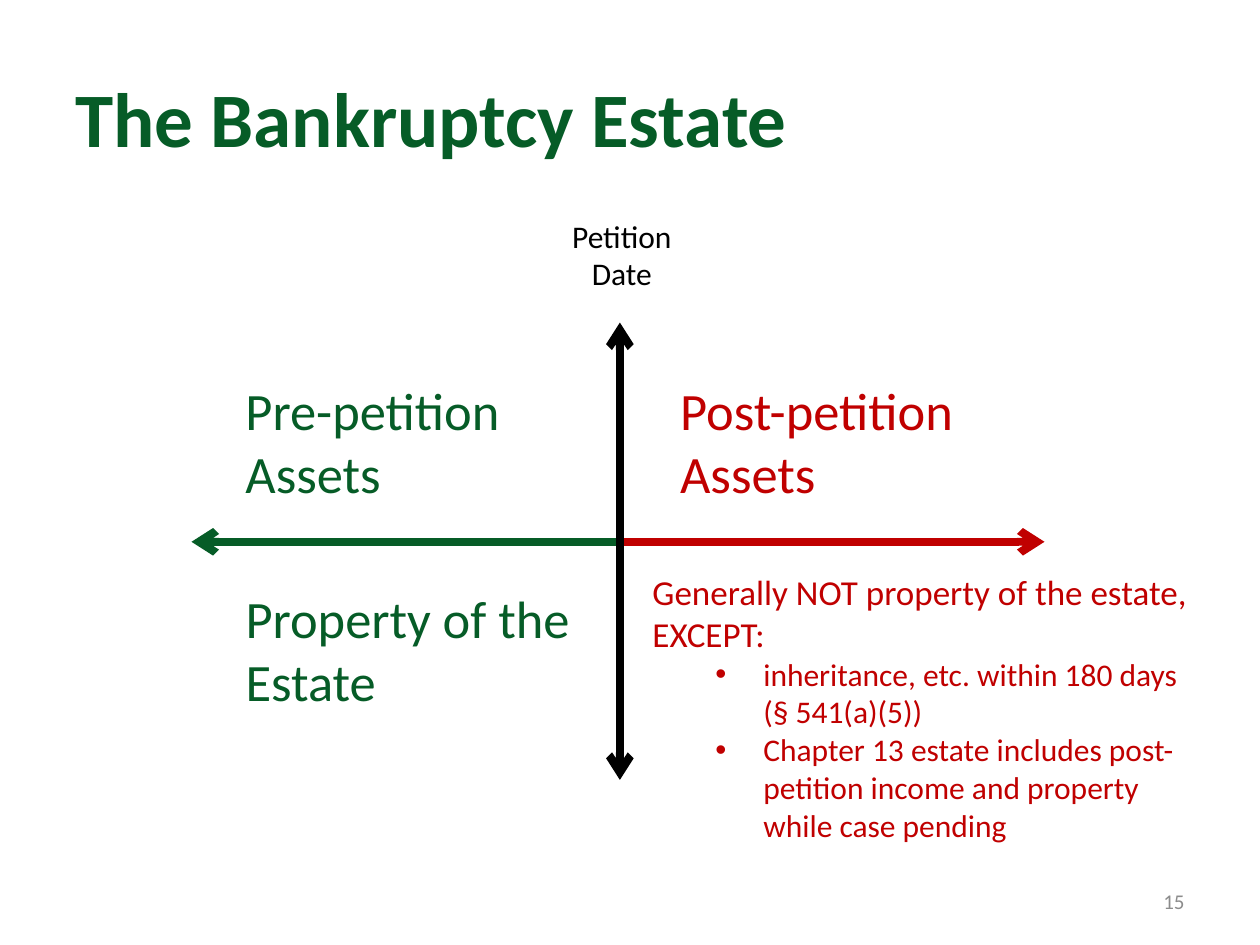
from dataclasses import dataclass

from lxml.etree import SubElement
from pptx import Presentation
from pptx.dml.color import RGBColor
from pptx.enum.shapes import MSO_CONNECTOR
from pptx.enum.text import MSO_ANCHOR, PP_ALIGN
from pptx.oxml.ns import qn
from pptx.util import Inches, Pt

GREEN = RGBColor(0x06, 0x5C, 0x27)
RED = RGBColor(0xC0, 0x00, 0x00)
BLACK = RGBColor(0x00, 0x00, 0x00)
GRAY = RGBColor(0x8C, 0x8C, 0x8C)

# The slide is a grid of 100 columns by 75 rows of square cells
COLS, ROWS = 100, 75
CELL = Inches(10) // COLS
CENTER_X, CENTER_Y = 49.2, 43


def grid(n: float) -> int:
    return round(n * CELL)


@dataclass
class Para:
    text: str
    size: float
    bullet: bool = False


@dataclass
class Label:
    box: tuple[float, float, float, float]  # column, row, columns, rows
    paras: list[Para]
    color: RGBColor
    align: PP_ALIGN = PP_ALIGN.LEFT
    anchor: MSO_ANCHOR = MSO_ANCHOR.TOP
    bold: bool = False


@dataclass
class Axis:
    start: tuple[float, float]
    end: tuple[float, float]
    color: RGBColor
    arrows: tuple[str, ...] = ("tailEnd",)


AXES = [
    Axis((CENTER_X, CENTER_Y), (82.9, CENTER_Y), RED),
    Axis((CENTER_X, CENTER_Y), (15.2, CENTER_Y), GREEN),
    Axis((CENTER_X, 25.6), (CENTER_X, 61.9), BLACK, ("headEnd", "tailEnd")),
]

LABELS = [
    # Title and slide number
    Label((5, 3, 90, 12.5), [Para("The Bankruptcy Estate", 44)], GREEN,
          anchor=MSO_ANCHOR.MIDDLE, bold=True),
    Label((71.7, 69.5, 23.3, 4), [Para("15", 12)], GRAY,
          PP_ALIGN.RIGHT, MSO_ANCHOR.MIDDLE),
    # Quadrants
    Label((18.5, 29.5, 29, 11.1), [Para("Pre-petition Assets", 30)], GREEN),
    Label((53, 29.5, 26.7, 11.1), [Para("Post-petition Assets", 30)], RED),
    Label((18.5, 46, 27.9, 11.1), [Para("Property of the Estate", 30)], GREEN),
    Label((50.8, 44.8, 45.8, 23.6), [
        Para("Generally NOT property of the estate, EXCEPT:", 20),
        Para("inheritance, etc. within 180 days (§ 541(a)(5))", 18, True),
        Para("Chapter 13 estate includes post-petition income and property "
             "while case pending", 18, True),
    ], RED),
    # Heading of the vertical axis
    Label((42.9, 16.7, 12.9, 7.1), [Para("Petition Date", 18)], BLACK,
          PP_ALIGN.CENTER),
]


def add_bullet(p) -> None:
    p.level = 1
    pPr = p._p.get_or_add_pPr()
    pPr.set("marL", str(grid(8.8)))
    pPr.set("indent", str(grid(-3.8)))
    SubElement(pPr, qn("a:buFont")).set("typeface", "Arial")
    SubElement(pPr, qn("a:buChar")).set("char", "•")


def add_label(s, label: Label) -> None:
    tf = s.shapes.add_textbox(*map(grid, label.box)).text_frame
    tf.word_wrap = True
    tf.vertical_anchor = label.anchor
    for i, para in enumerate(label.paras):
        p = tf.add_paragraph() if i else tf.paragraphs[0]
        p.alignment = label.align
        if para.bullet:
            add_bullet(p)
        r = p.add_run()
        r.text = para.text
        font = {"name": "Calibri", "size": Pt(para.size), "bold": label.bold}
        for key, value in font.items():
            setattr(r.font, key, value)
        r.font.color.rgb = label.color


def add_axis(s, axis: Axis) -> None:
    sp = s.shapes.add_connector(MSO_CONNECTOR.STRAIGHT,
                                *map(grid, axis.start + axis.end))
    sp.line.color.rgb = axis.color
    sp.line.width = Pt(4.5)
    ln = sp.line._get_or_add_ln()
    for end in axis.arrows:
        SubElement(ln, qn(f"a:{end}")).set("type", "arrow")
    SubElement(sp._element.spPr, qn("a:effectLst"))


def main() -> None:
    prs = Presentation()
    prs.slide_width, prs.slide_height = grid(COLS), grid(ROWS)
    s = prs.slides.add_slide(prs.slide_layouts[6])
    for axis in AXES:
        add_axis(s, axis)
    for label in LABELS:
        add_label(s, label)
    prs.save("out.pptx")


if __name__ == "__main__":
    main()
